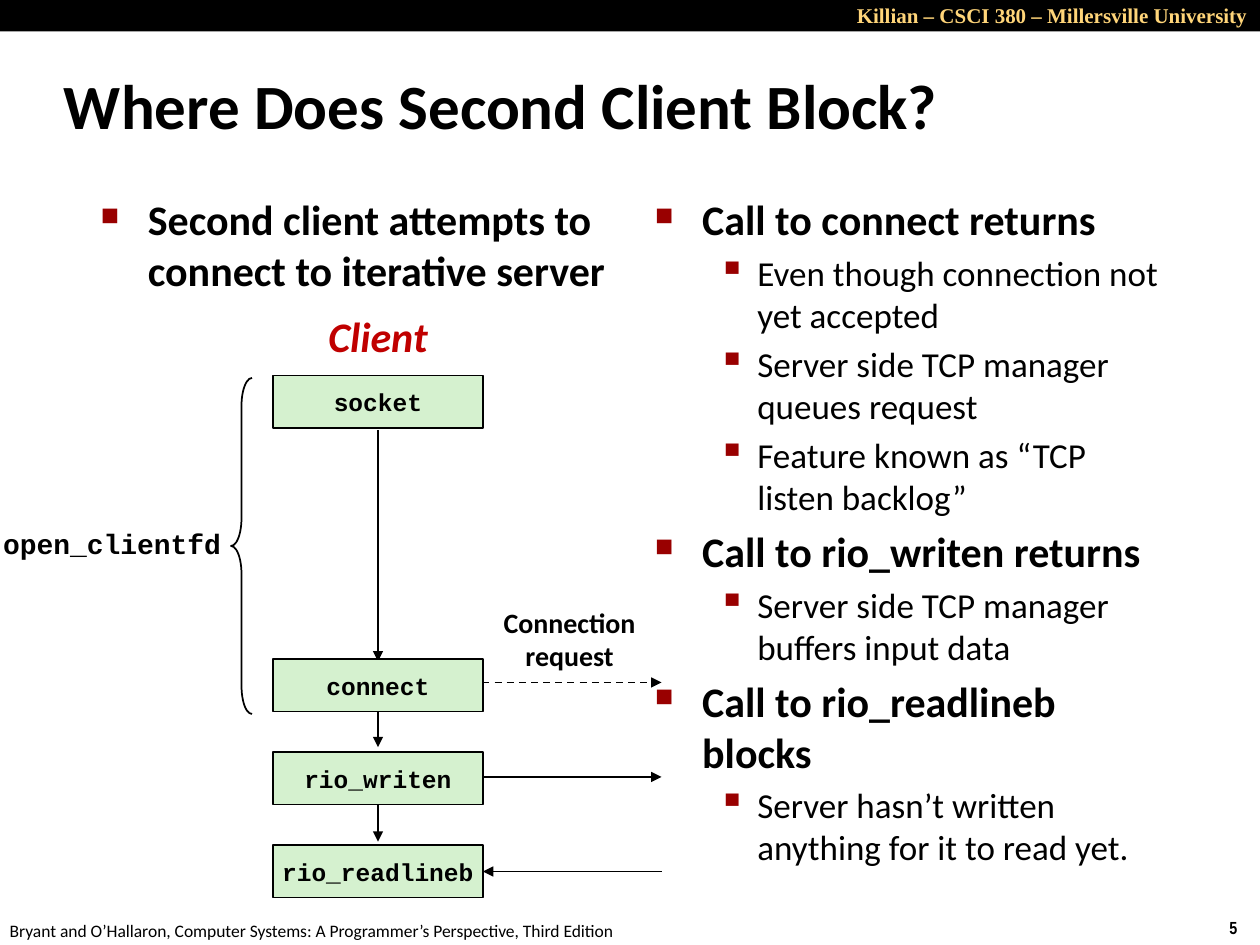
from lxml import etree
from pptx import Presentation
from pptx import util as u
from pptx.dml import color
from pptx.enum import dml, shapes, text
from pptx.oxml import ns

Pt = u.Pt
ALIGN = text.PP_ALIGN
MIDDLE = text.MSO_ANCHOR.MIDDLE


def paint(target, shade):
    if hasattr(target, "solid"):
        target.solid()
        target = target.fore_color
    target.rgb = color.RGBColor.from_string(shade)


def write(shape, lines, size, font, shade="000000", bold=True, italic=False,
          align=ALIGN.LEFT, anchor=text.MSO_ANCHOR.TOP, wrap=False):
    frame = shape.text_frame
    frame.word_wrap = wrap
    frame.vertical_anchor = anchor
    for index, line in enumerate(lines):
        para = frame.add_paragraph() if index else frame.paragraphs[0]
        para.alignment = align
        span = para.add_run()
        span.text = line
        span.font.size = Pt(size)
        span.font.name = font
        span.font.bold = bold
        span.font.italic = italic
        paint(span.font.color, shade)


deck = Presentation()
deck.slide_width, deck.slide_height = Pt(720), Pt(540)
page = deck.slides.add_slide(deck.slide_layouts[6])

banner = page.shapes.add_shape(shapes.MSO_SHAPE.RECTANGLE, 0, 0, Pt(720), Pt(18))
banner.shadow.inherit = False
paint(banner.fill, "000000")
banner.line.fill.background()

labels = [
    ((695.5, 520.5, 24.5, 19.5), ["5"], 10, "Arial Narrow", {}),
    ((-1.5, 522, 366, 19.5),
     ["Bryant and O’Hallaron, Computer Systems: A Programmer’s Perspective, Third Edition"],
     10, "Calibri", {"bold": False}),
    ((324, -2, 396, 22), ["Killian – CSCI 380 – Millersville University"],
     12, "Times New Roman", {"shade": "FFD579", "align": ALIGN.RIGHT, "wrap": True}),
    ((29.5, 29.5, 597.5, 60), ["Where Does Second Client Block?"],
     36, "Calibri", {"anchor": MIDDLE, "wrap": True}),
    ((180, 174, 72, 36), ["Client"], 24, "Calibri",
     {"shade": "C00000", "italic": True, "align": ALIGN.CENTER, "anchor": MIDDLE}),
    ((280, 342, 91, 46), ["Connection", "request"], 16, "Calibri",
     {"align": ALIGN.CENTER, "anchor": MIDDLE}),
    ((-6, 297.5, 140, 26.5), ["open_clientfd"], 16, "Courier New",
     {"align": ALIGN.CENTER, "anchor": MIDDLE}),
]
for area, lines, size, font, style in labels:
    box = page.shapes.add_textbox(*map(Pt, area))
    write(box, lines, size, font, **style)

columns = [
    ((50.4, 107.3, 304.6, 85), [(0, "Second client attempts to connect to iterative server")]),
    ((367.2, 107.3, 304.6, 391.7), [
        (0, "Call to connect returns"),
        (1, "Even though connection not yet accepted"),
        (1, "Server side TCP manager queues request"),
        (1, "Feature known as “TCP listen backlog”"),
        (0, "Call to rio_writen returns"),
        (1, "Server side TCP manager buffers input data"),
        (0, "Call to rio_readlineb blocks"),
        (1, "Server hasn’t written anything for it to read yet."),
    ]),
]
levels = [(24, True, 27, -27, "■", 60), (20, False, 58.5, -22.5, "▪", 110)]
for area, items in columns:
    box = page.shapes.add_textbox(*map(Pt, area))
    write(box, [line for _, line in items], 24, "Calibri", wrap=True)
    for para, (level, _) in zip(box.text_frame.paragraphs, items):
        size, bold, margin, indent, mark, percent = levels[level]
        para.level = level
        para.space_before = Pt(size * 0.2)
        para.runs[0].font.size = Pt(size)
        para.runs[0].font.bold = bold
        props = para._p.get_or_add_pPr()
        props.set("marL", str(Pt(margin)))
        props.set("indent", str(Pt(indent)))
        tint = etree.SubElement(props, ns.qn("a:buClr"))
        etree.SubElement(tint, ns.qn("a:srgbClr"), val="990000")
        etree.SubElement(props, ns.qn("a:buSzPct"), val=str(percent * 1000))
        etree.SubElement(props, ns.qn("a:buChar"), char=mark)

arrows = [
    (216, 246, 216, 378, False),
    (234, 390, 378, 390, True),
    (216, 403, 216, 427, False),
    (216, 457, 216, 481, False),
    (276, 444, 378, 444, False),
    (378, 498, 276, 498, False),
]
for *ends, dashed in arrows:
    arrow = page.shapes.add_connector(shapes.MSO_CONNECTOR.STRAIGHT, *map(Pt, ends))
    paint(arrow.line.fill, "000000")
    arrow.line.width = Pt(1)
    if dashed:
        arrow.line.dash_style = dml.MSO_LINE.DASH
    etree.SubElement(arrow.line._get_or_add_ln(), ns.qn("a:tailEnd"), type="triangle")
    etree.SubElement(arrow._element.spPr, ns.qn("a:effectLst"))

calls = [("socket", 214.6), ("connect", 376.6), ("rio_writen", 429.8), ("rio_readlineb", 483)]
for name, top in calls:
    box = page.shapes.add_shape(shapes.MSO_SHAPE.RECTANGLE, Pt(156), Pt(top), Pt(120), Pt(30))
    box.shadow.inherit = False
    paint(box.fill, "D5F1CF")
    paint(box.line.fill, "000000")
    box.line.width = Pt(1)
    write(box, [name], 14, "Courier New", align=ALIGN.CENTER, anchor=MIDDLE)

brace = page.shapes.add_shape(shapes.MSO_SHAPE.LEFT_BRACE, Pt(132), Pt(216), Pt(12), Pt(192))
brace.shadow.inherit = False
brace.adjustments[0] = 1.33
brace.adjustments[1] = 0.5
brace.fill.background()
paint(brace.line.fill, "000000")
brace.line.width = Pt(1)

deck.save("out.pptx")
